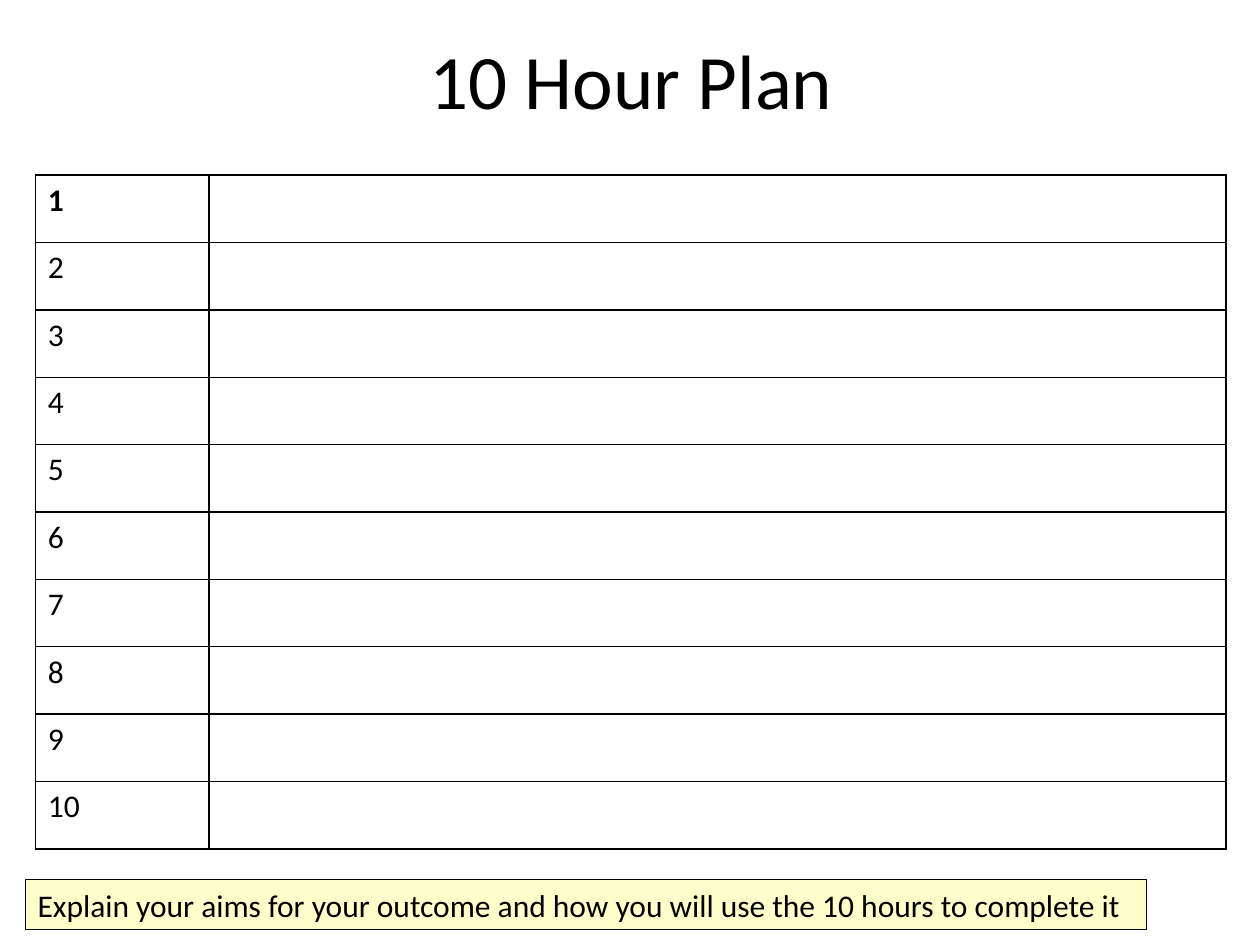
from dataclasses import dataclass

from pptx import Presentation
from pptx.dml.color import RGBColor
from pptx.enum.shapes import MSO_SHAPE as Preset
from pptx.enum.text import MSO_ANCHOR as Anchor, PP_ALIGN as Align
from pptx.oxml import parse_xml
from pptx.oxml.ns import nsdecls
from pptx.util import Inches, Pt

FONT = "Calibri"
BLACK, WHITE, CREAM = "000000", "FFFFFF", "FFFFCC"
HOURS = 10
COLUMN_WIDTHS = (1.38, 8.07)
ROW_HEIGHT = 0.535


@dataclass(frozen=True)
class Area:
    left: float
    top: float
    width: float
    height: float

    def lengths(self) -> tuple:
        return tuple(Inches(n) for n in (self.left, self.top, self.width, self.height))


TITLE = Area(0.51, 0, 9, 1.25)
PLAN = Area(0.28, 1.39, sum(COLUMN_WIDTHS), HOURS * ROW_HEIGHT)
HINT = Area(0.2, 6.98, 8.9, 0.4)


def paint(target, color: str) -> None:
    """Give a fill one solid colour."""
    target.solid()
    target.fore_color.rgb = RGBColor.from_string(color)


def write(frame, text: str, *, size: float = 18, bold: bool = False,
          align=Align.LEFT, anchor=Anchor.TOP) -> None:
    frame.word_wrap = True
    frame.vertical_anchor = anchor
    para = frame.paragraphs[0]
    para.alignment = align
    span = para.add_run()
    span.text = text
    span.font.name = FONT
    span.font.size = Pt(size)
    span.font.bold = bold
    paint(span.font.fill, BLACK)


def outline_cell(cell, color: str, points: float) -> None:
    """Draw all four borders of a cell, placed ahead of its fill."""
    properties = cell._tc.get_or_add_tcPr()
    for position, side in enumerate(("lnL", "lnR", "lnT", "lnB")):
        border = parse_xml(
            f'<a:{side} {nsdecls("a")} w="{Pt(points)}"><a:solidFill>'
            f'<a:srgbClr val="{color}"/></a:solidFill></a:{side}>')
        properties.insert(position, border)


def add_title(slide) -> None:
    box = slide.shapes.add_textbox(*TITLE.lengths())
    write(box.text_frame, "10 Hour Plan", size=44,
          align=Align.CENTER, anchor=Anchor.MIDDLE)


def add_plan(slide) -> None:
    table = slide.shapes.add_table(HOURS, len(COLUMN_WIDTHS), *PLAN.lengths()).table
    table.first_row = table.horz_banding = False
    for column, width in zip(table.columns, COLUMN_WIDTHS):
        column.width = Inches(width)
    for hour, row in enumerate(table.rows, start=1):
        row.height = Inches(ROW_HEIGHT)
        for cell in row.cells:
            paint(cell.fill, WHITE)
            outline_cell(cell, BLACK, 1)
        write(row.cells[0].text_frame, str(hour), bold=hour == 1)


def add_hint(slide) -> None:
    box = slide.shapes.add_shape(Preset.RECTANGLE, *HINT.lengths())
    box.shadow.inherit = False
    paint(box.fill, CREAM)
    paint(box.line.fill, BLACK)
    box.line.width = Pt(0.75)
    write(box.text_frame, "Explain your aims for your outcome and how you will "
                          "use the 10 hours to complete it")


def main() -> None:
    deck = Presentation()
    deck.slide_width, deck.slide_height = Inches(10), Inches(7.5)
    page = deck.slides.add_slide(deck.slide_layouts[6])
    paint(page.background.fill, WHITE)

    # Heading, note below the grid, and the hour-by-hour grid
    add_title(page)
    add_hint(page)
    add_plan(page)
    deck.save("out.pptx")


if __name__ == "__main__":
    main()
